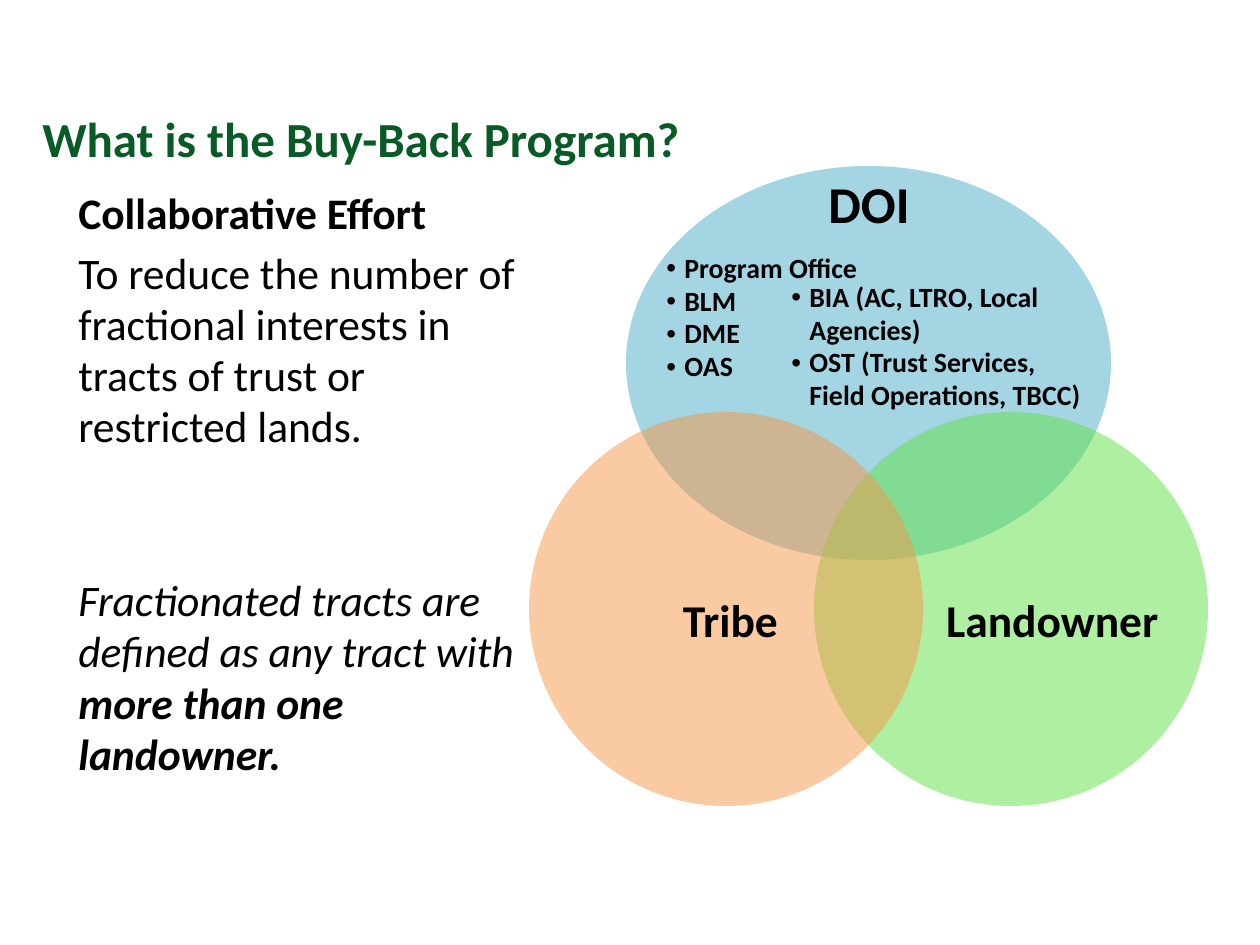
"""Build the Buy-Back Program slide with its three-circle diagram."""
from dataclasses import dataclass

from lxml.etree import SubElement
from pptx import Presentation
from pptx.dml.color import RGBColor
from pptx.enum.shapes import MSO_SHAPE as Shape
from pptx.enum.text import MSO_ANCHOR as Anchor, PP_ALIGN as Align
from pptx.oxml.ns import qn
from pptx.util import Emu, Pt

PX_PER_INCH = 126
FONT = "Calibri"
BLACK = RGBColor(0x00, 0x00, 0x00)
TITLE_GREEN = RGBColor(0x09, 0x5B, 0x26)
BLUE = RGBColor(0x4B, 0xAC, 0xC6)
GREEN = RGBColor(0x60, 0xE1, 0x46)
ORANGE = RGBColor(0xF7, 0x96, 0x46)
BULLET_INDENT = 18


@dataclass(frozen=True)
class Box:
    left: int
    top: int
    width: int
    height: int

    def emu(self) -> tuple[Emu, ...]:
        return tuple(map(px, (self.left, self.top, self.width, self.height)))


@dataclass(frozen=True)
class Run:
    text: str
    bold: bool = True
    italic: bool = False


@dataclass(frozen=True)
class Line:
    runs: tuple[Run, ...]
    space_before: float = 0


@dataclass(frozen=True)
class Circle:
    box: Box
    color: RGBColor
    label: str
    label_box: Box | None = None


def px(length: int) -> Emu:
    return Emu(round(length * 914400 / PX_PER_INCH))


def plain(*texts: str) -> list[Line]:
    return [Line((Run(text),)) for text in texts]


def add_bullet(paragraph) -> None:
    properties = paragraph._p.get_or_add_pPr()
    properties.set("marL", str(px(BULLET_INDENT)))
    properties.set("indent", str(-px(BULLET_INDENT)))
    SubElement(properties, qn("a:buFont"), typeface="Arial")
    SubElement(properties, qn("a:buChar"), char="•")


def add_text(slide, box: Box, lines: list[Line], *, size: float,
             color: RGBColor = BLACK, align=Align.LEFT, anchor=Anchor.TOP,
             spacing: float = 1.0, bullets: bool = False,
             inset: bool = True) -> None:
    frame = slide.shapes.add_textbox(*box.emu()).text_frame
    frame.word_wrap = True
    frame.vertical_anchor = anchor
    if not inset:
        frame.margin_left = frame.margin_right = 0
        frame.margin_top = frame.margin_bottom = 0
    for index, line in enumerate(lines):
        paragraph = frame.add_paragraph() if index else frame.paragraphs[0]
        if bullets:
            add_bullet(paragraph)
        paragraph.alignment = align
        paragraph.line_spacing = spacing
        if line.space_before:
            paragraph.space_before = Pt(line.space_before)
        for part in line.runs:
            run = paragraph.add_run()
            run.text = part.text
            font = run.font
            font.name, font.size = FONT, Pt(size)
            font.bold, font.italic = part.bold, part.italic
            font.color.rgb = color


def add_circle(slide, circle: Circle) -> None:
    shape = slide.shapes.add_shape(Shape.OVAL, *circle.box.emu())
    shape.shadow.inherit = False
    shape.line.fill.background()
    shape.fill.solid()
    shape.fill.fore_color.rgb = circle.color
    color_element = shape._element.spPr.find(qn("a:solidFill"))[0]
    SubElement(color_element, qn("a:alpha"), val="50000")
    if circle.label_box:
        add_text(slide, circle.label_box, plain(circle.label), size=26,
                 align=Align.CENTER, anchor=Anchor.MIDDLE, spacing=0.9,
                 inset=False)


TITLE = plain("What is the Buy-Back Program?")
BODY = [
    Line((Run("Collaborative Effort"),)),
    Line((Run("To reduce the number of fractional interests in tracts of "
              "trust or restricted lands.", bold=False),), 5),
    Line((Run("Fractionated tracts are defined as any tract with ",
              bold=False, italic=True),
          Run("more than one landowner.", italic=True)), 70),
]
CIRCLES = [
    Circle(Box(626, 166, 485, 394), BLUE, "DOI"),
    Circle(Box(814, 412, 394, 394), GREEN, "Landowner",
           Box(934, 514, 237, 217)),
    Circle(Box(529, 412, 394, 394), ORANGE, "Tribe",
           Box(612, 514, 237, 217)),
]
OFFICES = plain("Program Office", "BLM", "DME", "OAS")
BUREAUS = plain("BIA (AC, LTRO, Local Agencies)",
                "OST (Trust Services, Field Operations, TBCC)")


def main() -> None:
    presentation = Presentation()
    presentation.slide_width = px(1260)
    presentation.slide_height = px(945)
    slide = presentation.slides.add_slide(presentation.slide_layouts[6])

    add_text(slide, Box(30, 48, 1200, 179), TITLE, size=28,
             color=TITLE_GREEN, anchor=Anchor.MIDDLE)
    add_text(slide, Box(66, 182, 488, 643), BODY, size=24.9, spacing=0.98)
    for circle in CIRCLES:
        add_circle(slide, circle)
    add_text(slide, Box(654, 246, 249, 147), OFFICES, size=15.9,
             spacing=0.98, bullets=True)
    add_text(slide, Box(779, 275, 315, 147), BUREAUS, size=15.9,
             spacing=0.98, bullets=True)
    add_text(slide, Box(779, 166, 180, 76), plain(CIRCLES[0].label),
             size=29.5, align=Align.CENTER)
    presentation.save("out.pptx")


if __name__ == "__main__":
    main()
